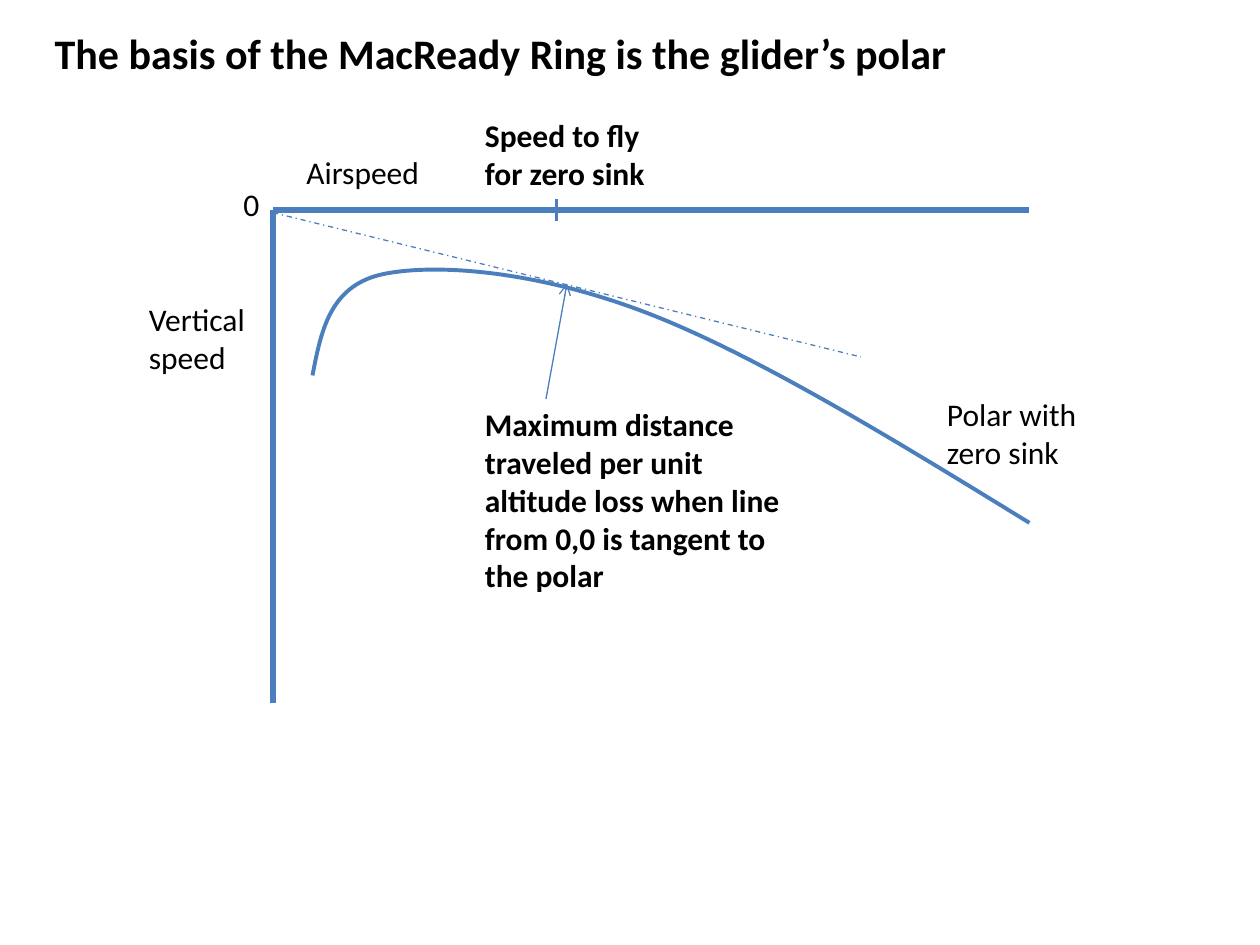
from lxml.etree import SubElement
from pptx import Presentation
from pptx.dml.color import RGBColor
from pptx.enum.dml import MSO_LINE_DASH_STYLE as DASH
from pptx.enum.shapes import MSO_CONNECTOR as CONN
from pptx.enum.text import MSO_ANCHOR, MSO_AUTO_SIZE as FIT, PP_ALIGN
from pptx.oxml.ns import qn
from pptx.util import Inches, Pt

prs = Presentation()
prs.slide_width, prs.slide_height = Inches(10), Inches(7.5)
COL, ROW = prs.slide_width / 120, prs.slide_height / 90
slide = prs.slides.add_slide(prs.slide_layouts[5])


def set_line(sp, width):
    sp.line.color.rgb = RGBColor.from_string("4B7EBC")
    sp.line.width = Pt(width)


def write(sp, text, box, size=18, bold=False):
    x, y, w, h = box
    sp.left, sp.top = round(x * COL), round(y * ROW)
    sp.width, sp.height = round(w * COL), round(h * ROW)
    tf = sp.text_frame
    tf.text = text
    tf.word_wrap = len(text) > 1
    tf.auto_size = FIT.SHAPE_TO_FIT_TEXT
    tf.vertical_anchor = MSO_ANCHOR.TOP
    p = tf.paragraphs[0]
    p.alignment = PP_ALIGN.LEFT
    p.font.name, p.font.size, p.font.bold = "Calibri", Pt(size), bold
    p.font.color.rgb = RGBColor.from_string("000000")


write(slide.shapes.title, "The basis of the MacReady Ring is the glider’s polar", (4, 2, 109, 6), 24, True)

axes = slide.shapes.add_group_shape()
lines = [
    (axes, (26, 67), (26, 20), 3, None, False),
    (axes, (26, 20), (98, 20), 3, None, False),
    (slide, (26, 20.25), (82, 34), 0.75, DASH.DASH_DOT, False),
    (slide, (52, 38), (54, 27), 0.75, None, True),
    (slide, (53, 21), (53, 19), 2.25, None, False),
]
for parent, (x1, y1), (x2, y2), width, dash, arrow in lines:
    c = parent.shapes.add_connector(
        CONN.STRAIGHT, round(x1 * COL), round(y1 * ROW), round(x2 * COL), round(y2 * ROW))
    set_line(c, width)
    spPr = c._element.spPr
    if dash:
        c.line.dash_style = dash
    if arrow:
        SubElement(spPr.find(qn("a:ln")), qn("a:tailEnd"), type="arrow")
    SubElement(spPr, qn("a:effectLst"))

polar = [(2.48, 2.98), (2.55, 2.62), (2.62, 2.25), (3.07, 2.17), (3.51, 2.09),
         (4.3, 2.16), (5.15, 2.49), (6, 2.82), (7.08, 3.48), (8.17, 4.15)]
points = [(Inches(x), Inches(y)) for x, y in polar]
builder = slide.shapes.build_freeform(*points[0])
builder.add_line_segments(points[1:], close=False)
curve = builder.convert_to_shape()
curve.fill.background()
curve.shadow.inherit = False
set_line(curve, 2.25)
outline = next(curve._element.iter(qn("a:path")))
segments = outline.findall(qn("a:lnTo"))
for i in range(0, len(segments), 3):
    bezier = SubElement(outline, qn("a:cubicBezTo"))
    for segment in segments[i:i + 3]:
        bezier.append(segment[0])
        outline.remove(segment)

labels = [
    ("Vertical speed", (13, 28, 12, 8.5), False),
    ("Airspeed", (28, 14, 30, 4.8), False),
    ("0", (22, 17, 4, 4.8), False),
    ("Polar with zero sink", (89, 37, 20, 8.5), False),
    ("Maximum distance traveled per unit altitude loss when line from 0,0 is tangent to the polar",
     (45, 38, 32, 23), True),
    ("Speed to fly for zero sink", (45, 10.5, 21, 8.5), True),
]
for text, box, bold in labels:
    write(slide.shapes.add_textbox(0, 0, 0, 0), text, box, bold=bold)

prs.save("out.pptx")
